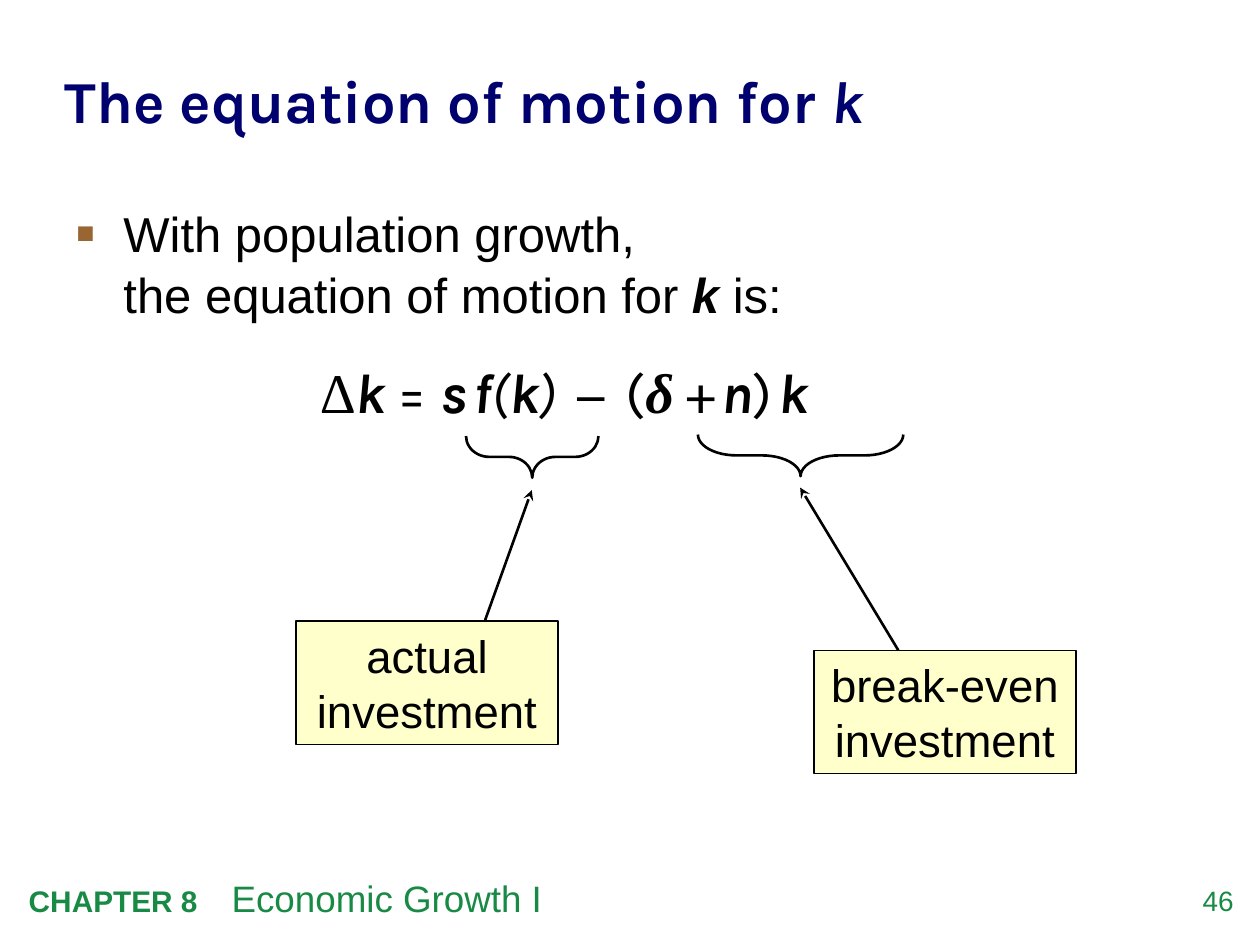
from dataclasses import dataclass
from typing import Optional

from lxml import etree
from pptx import Presentation
from pptx.dml.color import RGBColor
from pptx.enum import shapes, text
from pptx.oxml import ns
from pptx.util import Cm, Pt

COLORS = {
    "ink": "000000",
    "title": "00006E",
    "footer": "198A46",
    "bullet": "996633",
    "note": "FFFFCC",
}
BRACE_DEPTH = 0.84
NOTE_WIDTH, NOTE_HEIGHT = 5.28, 2.49


@dataclass
class Span:
    """A stretch of text; None keeps the paragraph's setting."""
    words: str
    size: Optional[float] = None
    bold: Optional[bool] = None
    italic: Optional[bool] = None
    font: Optional[str] = None


@dataclass
class Callout:
    """A brace under a term, with an arrow from a note; lengths in cm."""
    label: str
    brace_center: tuple[float, float]
    brace_span: float
    brace_curve: float
    note_corner: tuple[float, float]
    arrow_start: tuple[float, float]
    arrow_end: tuple[float, float]


def color(name: str) -> RGBColor:
    return RGBColor.from_string(COLORS[name])


def add_element(parent, tag: str, **attributes: str):
    return etree.SubElement(parent, ns.qn(tag), attributes)


def style_font(font, name: str, size: float, color_name: str) -> None:
    font.name, font.size = name, Pt(size)
    font.color.rgb = color(color_name)


def add_spans(paragraph, spans: list[Span], name: str, size: float, color_name: str) -> None:
    for span in spans:
        run = paragraph.add_run()
        run.text = span.words
        style_font(run.font, span.font or name, span.size or size, color_name)
        run.font.bold, run.font.italic = span.bold, span.italic


def add_text(slide, left: float, top: float, width: float, height: float):
    box = slide.shapes.add_textbox(Cm(left), Cm(top), Cm(width), Cm(height))
    box.text_frame.word_wrap = True
    return box.text_frame


def clear_margins(frame) -> None:
    frame.margin_left = frame.margin_right = frame.margin_top = frame.margin_bottom = 0


def style_line(line, width: float) -> None:
    line.color.rgb = color("ink")
    line.width = Pt(width)


def add_callout(slide, callout: Callout) -> None:
    # Brace, turned to open upwards
    center_x, center_y = callout.brace_center
    brace = slide.shapes.add_shape(
        shapes.MSO_SHAPE.LEFT_BRACE,
        Cm(center_x - BRACE_DEPTH / 2), Cm(center_y - callout.brace_span / 2),
        Cm(BRACE_DEPTH), Cm(callout.brace_span))
    brace.rotation = 270
    brace.adjustments[0] = callout.brace_curve
    brace.shadow.inherit = False
    brace.fill.background()
    style_line(brace.line, 1.5)

    # Note
    left, top = callout.note_corner
    note = slide.shapes.add_shape(
        shapes.MSO_SHAPE.RECTANGLE, Cm(left), Cm(top), Cm(NOTE_WIDTH), Cm(NOTE_HEIGHT))
    note.shadow.inherit = False
    note.fill.solid()
    note.fill.fore_color.rgb = color("note")
    style_line(note.line, 0.75)
    note.text_frame.word_wrap = True
    paragraph = note.text_frame.paragraphs[0]
    paragraph.text = callout.label
    paragraph.alignment = text.PP_ALIGN.CENTER
    style_font(paragraph.font, "Arial", 26, "ink")
    paragraph.runs[0].font.color.rgb = color("ink")

    # Arrow
    arrow = slide.shapes.add_connector(
        shapes.MSO_CONNECTOR.STRAIGHT,
        *map(Cm, callout.arrow_start), *map(Cm, callout.arrow_end))
    style_line(arrow.line, 1.5)
    add_element(arrow.line._get_or_add_ln(), "a:tailEnd", type="stealth")
    add_element(arrow._element.spPr, "a:effectLst")


def add_footer(slide) -> None:
    frame = add_text(slide, 23.47, 17.81, 1.4, 0.81)
    clear_margins(frame)
    paragraph = frame.paragraphs[0]
    paragraph.text = "46"
    paragraph.alignment = text.PP_ALIGN.RIGHT
    style_font(paragraph.font, "Arial", 16, "footer")

    paragraph = add_text(slide, 0.33, 17.53, 20.78, 1.14).paragraphs[0]
    tabs = add_element(paragraph._p.get_or_add_pPr(), "a:tabLst")
    add_element(tabs, "a:tab", pos=str(Cm(4.09)), algn="l")
    add_spans(paragraph, [Span("CHAPTER 8\t", 17, bold=True), Span("Economic Growth I")],
              "Arial", 21, "footer")


def add_title(slide) -> None:
    title = slide.shapes.title
    title.left, title.top, title.width, title.height = map(Cm, (1.3, 0.66, 22.91, 2.62))
    frame = title.text_frame
    frame.auto_size = text.MSO_AUTO_SIZE.NONE
    frame.vertical_anchor = text.MSO_ANCHOR.MIDDLE
    clear_margins(frame)
    paragraph = frame.paragraphs[0]
    paragraph.alignment = text.PP_ALIGN.LEFT
    paragraph.line_spacing = 1.05
    add_spans(paragraph, [Span("The equation of motion for ", bold=True),
                          Span("k", bold=True, italic=True)], "Karla", 34, "title")


def add_statement(slide) -> None:
    paragraph = add_text(slide, 1.27, 3.91, 22.86, 3.1).paragraphs[0]
    paragraph.line_spacing = 1.05
    properties = paragraph._p.get_or_add_pPr()
    properties.set("marL", str(Cm(0.97)))
    properties.set("indent", str(Cm(-0.97)))
    bullet_color = add_element(properties, "a:buClr")
    add_element(bullet_color, "a:srgbClr", val=COLORS["bullet"])
    add_element(properties, "a:buSzPct", val="120000")
    add_element(properties, "a:buFont", typeface="Arial")
    add_element(properties, "a:buChar", char="▪")
    add_spans(paragraph, [Span("With population growth, ")], "Arial", 28, "ink")
    paragraph.add_line_break()
    add_spans(paragraph, [Span("the equation of motion for "),
                          Span("k", bold=True, italic=True), Span(" is:")],
              "Arial", 28, "ink")


def add_equation(slide) -> None:
    def variable(words: str, font: Optional[str] = None) -> Span:
        return Span(words, bold=True, italic=True, font=font)

    thin = Span(" ", 15, bold=True, italic=True)
    spans = [
        Span("Δ", font="Times New Roman"), variable("k "), Span("= "),
        variable("s"), thin, variable("f"), Span("(", italic=True), variable("k"),
        Span(")", italic=True), thin, Span(" ", bold=True), Span("− "), thin,
        Span("("), variable("δ", "Times New Roman"), Span(" ", 30, bold=True, italic=True),
        Span("+"), thin, variable("n"), Span(")"), thin, variable("k"),
    ]
    paragraph = add_text(slide, 6.2, 7.09, 12.75, 1.63).paragraphs[0]
    add_spans(paragraph, spans, "Karla", 32, "ink")


CALLOUTS = [
    Callout("break-even investment", (16.14, 9.18), 4.14, 0.93,
            (16.41, 13.11), (18.11, 13.11), (16.13, 9.83)),
    Callout("actual investment", (10.73, 9.21), 2.67, 0.56,
            (5.97, 12.52), (9.78, 12.5), (10.72, 9.88)),
]


def main() -> None:
    presentation = Presentation()
    presentation.slide_width, presentation.slide_height = Cm(25.4), Cm(19.05)
    slide = presentation.slides.add_slide(presentation.slide_layouts[5])
    add_footer(slide)
    add_title(slide)
    add_statement(slide)
    for callout in CALLOUTS:
        add_callout(slide, callout)
    add_equation(slide)
    presentation.save("out.pptx")


if __name__ == "__main__":
    main()
